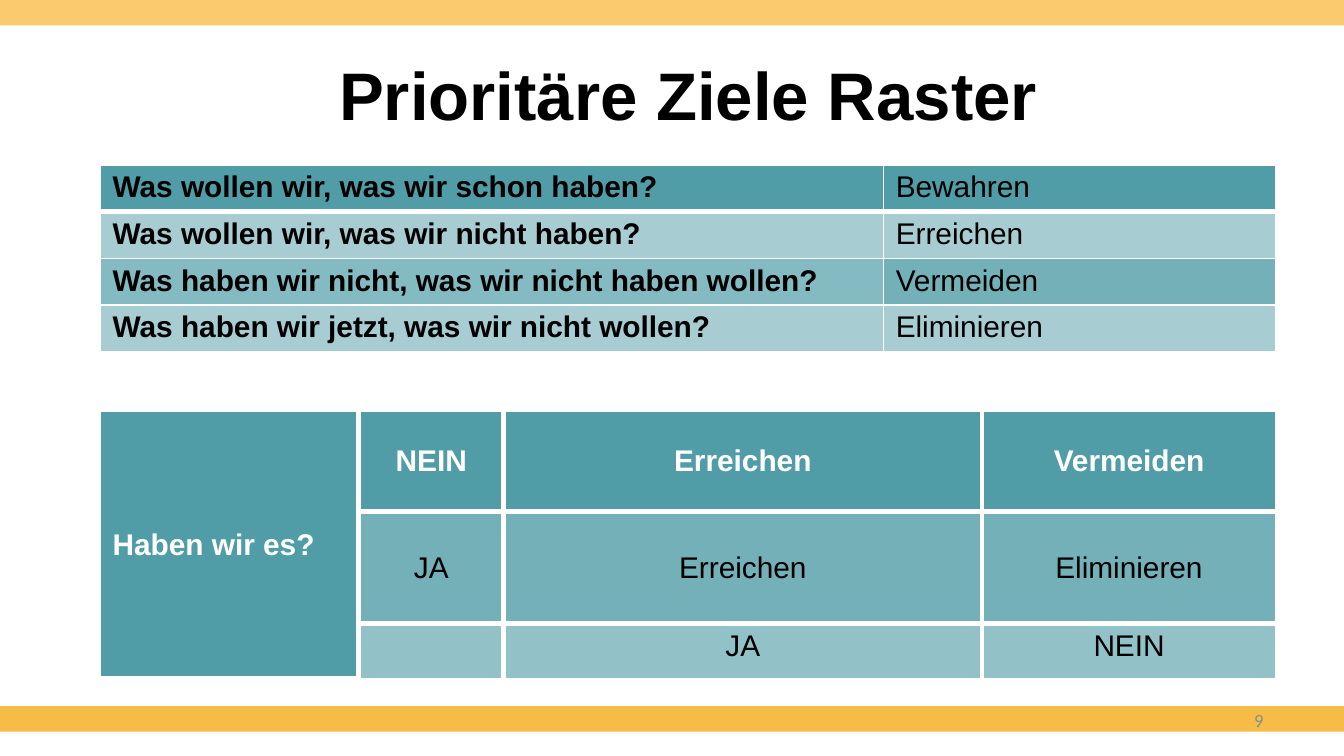
from dataclasses import dataclass

from lxml.etree import SubElement
from pptx import Presentation
from pptx.dml.color import RGBColor
from pptx.enum.shapes import MSO_SHAPE as Shape
from pptx.enum.text import MSO_ANCHOR as Anchor, PP_ALIGN as Align
from pptx.oxml import parse_xml
from pptx.oxml.ns import nsdecls, qn
from pptx.util import Cm, Pt


@dataclass(frozen=True)
class Theme:
    top_bar: str = "FACA6E"
    bottom_bar: str = "F5BD47"
    teal: str = "509DA7"
    dark: str = "000000"
    light: str = "FFFFFF"
    muted: str = "8C8C8C"
    heading_font: str = "Arial"
    number_font: str = "Calibri"
    title_size: int = 36
    table_size: int = 16
    number_size: int = 10


@dataclass
class CellStyle:
    opacity: int = 100
    color: str = "000000"
    bold: bool = False
    align: Align = Align.LEFT
    anchor: Anchor = Anchor.TOP


class SlideBuilder:
    def __init__(self, slide, theme):
        self.slide = slide
        self.theme = theme

    def format_runs(self, paragraph, font_name, size, color, bold=False):
        for run in paragraph.runs:
            run.font.name = font_name
            run.font.size = Pt(size)
            run.font.bold = bold
            run.font.color.rgb = RGBColor.from_string(color)

    def bar(self, top, color):
        shape = self.slide.shapes.add_shape(
            Shape.RECTANGLE, 0, Cm(top), Cm(25.4), Cm(0.48))
        shape.shadow.inherit = False
        shape.fill.solid()
        shape.fill.fore_color.rgb = RGBColor.from_string(color)
        shape.line.fill.background()

    def title(self, text, left, top, width, height):
        shape = self.slide.shapes.title
        shape.left, shape.top = Cm(left), Cm(top)
        shape.width, shape.height = Cm(width), Cm(height)
        text_frame = shape.text_frame
        text_frame.text = text
        text_frame.vertical_anchor = Anchor.MIDDLE
        paragraph = text_frame.paragraphs[0]
        paragraph.alignment = Align.CENTER
        self.format_runs(paragraph, self.theme.heading_font,
                         self.theme.title_size, self.theme.dark, True)

    def page_number(self, text, left, top, width, height):
        shape = self.slide.shapes.add_textbox(
            Cm(left), Cm(top), Cm(width), Cm(height))
        text_frame = shape.text_frame
        text_frame.word_wrap = True
        text_frame.text = text
        text_frame.vertical_anchor = Anchor.MIDDLE
        paragraph = text_frame.paragraphs[0]
        paragraph.alignment = Align.RIGHT
        self.format_runs(paragraph, self.theme.number_font,
                         self.theme.number_size, self.theme.muted)

    def table(self, left, top, columns, rows, texts, style_for,
              column_lines, row_lines):
        frame = self.slide.shapes.add_table(
            len(rows), len(columns), Cm(left), Cm(top),
            Cm(sum(columns)), Cm(sum(rows)))
        table = frame.table
        table.first_row = table.horz_banding = False
        for column, width in zip(table.columns, columns):
            column.width = Cm(width)
        for row, height in zip(table.rows, rows):
            row.height = Cm(height)
        for r, row_texts in enumerate(texts):
            for c, text in enumerate(row_texts):
                borders = {"L": column_lines[c], "R": column_lines[c + 1],
                           "T": row_lines[r], "B": row_lines[r + 1]}
                self.cell(table.cell(r, c), text, style_for(r, c), borders)
        return table

    def cell(self, cell, text, style, borders):
        cell.margin_left = cell.margin_right = Cm(0.23)
        cell.margin_top = cell.margin_bottom = Cm(0.11)
        cell.vertical_anchor = style.anchor
        cell.text_frame.text = text
        paragraph = cell.text_frame.paragraphs[0]
        paragraph.alignment = style.align
        self.format_runs(paragraph, self.theme.heading_font,
                         self.theme.table_size, style.color, style.bold)
        cell.fill.solid()
        cell.fill.fore_color.rgb = RGBColor.from_string(self.theme.teal)
        properties = cell._tc.get_or_add_tcPr()
        if style.opacity < 100:
            color = properties.find(".//" + qn("a:srgbClr"))
            SubElement(color, qn("a:alpha"), val=str(style.opacity * 1000))
        for index, (side, width) in enumerate(borders.items()):
            properties.insert(index, parse_xml(
                f'<a:ln{side} {nsdecls("a")} w="{Pt(width)}"><a:solidFill>'
                f'<a:srgbClr val="{self.theme.light}"/></a:solidFill>'
                f'</a:ln{side}>'))


def question_style(row, column):
    opacities = [(100, 100), (50, 50), (70, 80), (50, 50)]
    return CellStyle(opacities[row][column], bold=column == 0)


def grid_style(row, column):
    if column == 0:
        return CellStyle(color=Theme.light, bold=True, anchor=Anchor.MIDDLE)
    return CellStyle(
        (100, 80, 62)[row],
        Theme.light if row == 0 else Theme.dark,
        row == 0,
        Align.CENTER,
        Anchor.TOP if row == 2 else Anchor.MIDDLE)


def main():
    presentation = Presentation()
    presentation.slide_width = Cm(25.4)
    presentation.slide_height = Cm(14.28)
    slide = presentation.slides.add_slide(presentation.slide_layouts[5])
    theme = Theme()
    builder = SlideBuilder(slide, theme)

    builder.bar(13.34, theme.bottom_bar)
    builder.bar(0, theme.top_bar)
    builder.title("Prioritäre Ziele Raster", 1.9, 0.58, 22.22, 2.39)

    questions = [
        ("Was wollen wir, was wir schon haben?", "Bewahren"),
        ("Was wollen wir, was wir nicht haben?", "Erreichen"),
        ("Was haben wir nicht, was wir nicht haben wollen?", "Vermeiden"),
        ("Was haben wir jetzt, was wir nicht wollen?", "Eliminieren"),
    ]
    builder.table(1.9, 3.12, [14.8, 7.42], [0.88] * 4, questions,
                  question_style, [1, 1, 1], [1, 3, 1, 1, 1])

    builder.page_number("9", 18.21, 13.23, 5.92, 0.76)

    goals = [
        ("Haben wir es?", "NEIN", "Erreichen", "Vermeiden"),
        ("", "JA", "Erreichen", "Eliminieren"),
        ("", "", "JA", "NEIN"),
    ]
    grid = builder.table(1.9, 7.77, [4.88, 2.74, 9.04, 5.56],
                         [1.9, 2.11, 1.04], goals,
                         grid_style, [1, 3, 3, 3, 1], [1, 3, 3, 1])
    grid.cell(0, 0).merge(grid.cell(2, 0))

    presentation.save("out.pptx")


if __name__ == "__main__":
    main()
